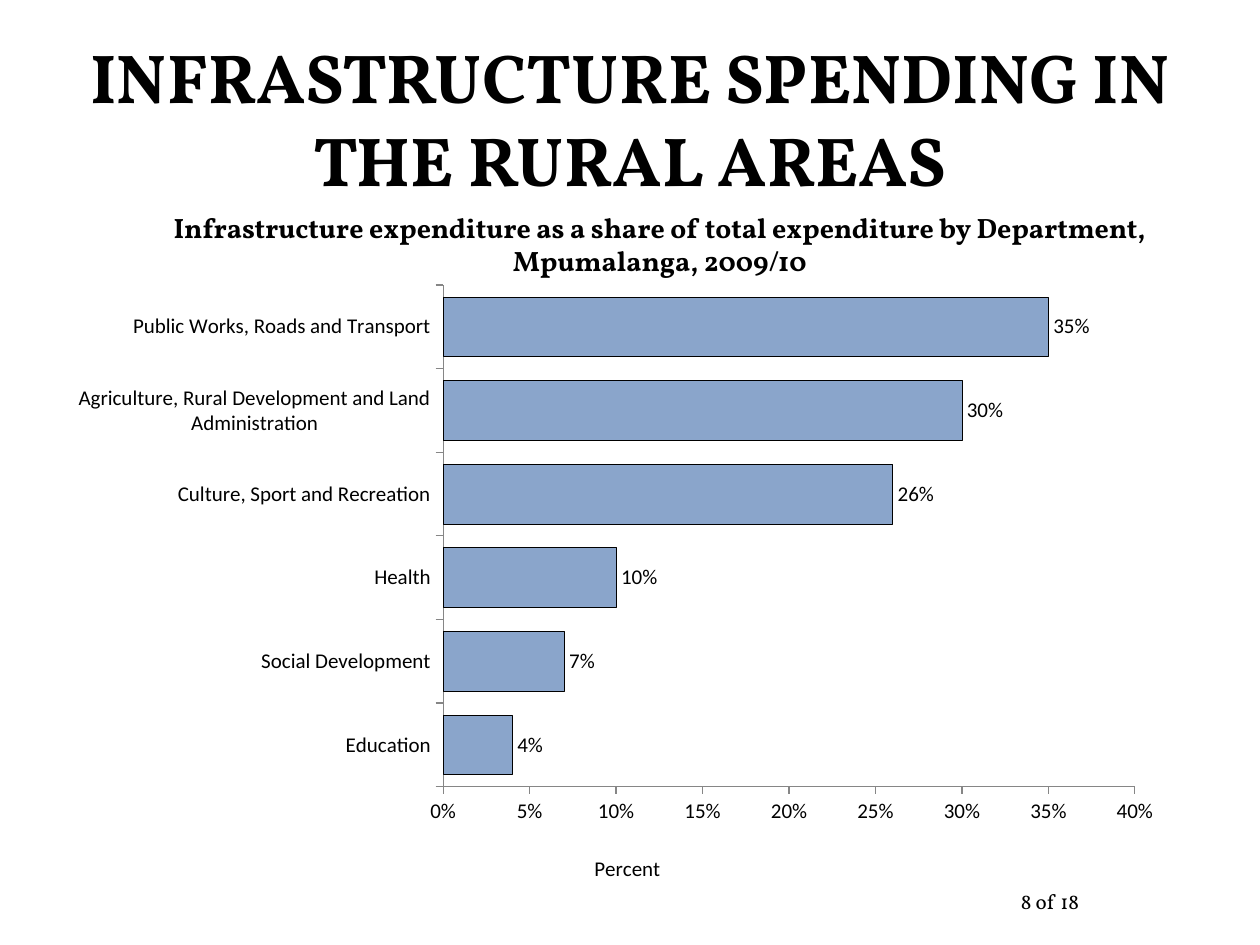
import pptx
import pptx.chart.data
import pptx.dml.color
import pptx.enum.chart
import pptx.enum.text
import pptx.oxml
import pptx.oxml.ns
import pptx.util

BLACK = pptx.dml.color.RGBColor(0x00, 0x00, 0x00)
BAR_BLUE = pptx.dml.color.RGBColor(0x8A, 0xA5, 0xCB)
AXIS_GREY = pptx.dml.color.RGBColor(0x86, 0x86, 0x86)
PX_PER_INCH = 126

SHARES = {
    "Education": 0.04,
    "Social Development": 0.07,
    "Health": 0.1,
    "Culture, Sport and Recreation": 0.26,
    "Agriculture, Rural Development and Land Administration": 0.3,
    "Public Works, Roads and Transport": 0.35,
}


def px(n):
    return pptx.util.Emu(round(n * 914400 / PX_PER_INCH))


def set_layout(parent, index, target=None, **fractions):
    for old in parent.findall(pptx.oxml.ns.qn("c:layout")):
        parent.remove(old)
    tags = f'<c:layoutTarget val="{target}"/>' if target else ""
    tags += "".join(f'<c:{k}Mode val="edge"/>' for k in "xy")
    tags += "".join(f'<c:{k} val="{v}"/>' for k, v in fractions.items())
    parent.insert(index, pptx.oxml.parse_xml(
        f'<c:layout {pptx.oxml.ns.nsdecls("c")}>'
        f"<c:manualLayout>{tags}</c:manualLayout></c:layout>"))


class Deck:
    """Holds the text and chart style and the current slide."""

    heading_font = "Vollkorn"
    chart_font = "Calibri"

    def __init__(self, prs):
        self.s = prs.slides.add_slide(prs.slide_layouts[5])

    def style(self, font, name, size, bold=False):
        font.name, font.size, font.bold = name, pptx.util.Pt(size), bold
        font.color.rgb = BLACK

    def fill_text(self, sp, text, size, bold, anchor):
        tf = sp.text_frame
        tf.word_wrap = True
        tf.auto_size = pptx.enum.text.MSO_AUTO_SIZE.NONE
        tf.vertical_anchor = anchor
        p = tf.paragraphs[0]
        p.text = text
        p.alignment = pptx.enum.text.PP_ALIGN.CENTER
        self.style(p.font, self.heading_font, size, bold)

    def title(self, text, x, y, w, h):
        sp = self.s.shapes.title
        sp.left, sp.top, sp.width, sp.height = map(px, (x, y, w, h))
        self.fill_text(sp, text, 39.6, True,
                       pptx.enum.text.MSO_ANCHOR.MIDDLE)

    def text(self, text, x, y, w, h, size, bold=False,
             anchor=pptx.enum.text.MSO_ANCHOR.TOP):
        sp = self.s.shapes.add_textbox(*map(px, (x, y, w, h)))
        self.fill_text(sp, text, size, bold, anchor)

    def bar_chart(self, shares, x, y, w, h):
        data = pptx.chart.data.CategoryChartData(number_format="0%")
        data.categories = list(shares)
        data.add_series("Series 1", list(shares.values()))
        chart = self.s.shapes.add_chart(
            pptx.enum.chart.XL_CHART_TYPE.BAR_CLUSTERED,
            *map(px, (x, y, w, h)), data).chart
        chart.has_legend = chart.has_title = False
        self.style(chart.font, self.chart_font, 12)
        set_layout(chart.plots[0]._element.getparent(), 0, "inner",
                   x=0.33, y=0.03, w=0.61, h=0.79)
        self.bars(chart.plots[0])
        self.axes(chart)

    def bars(self, plot):
        plot.gap_width = 40
        plot.vary_by_categories = False
        series = plot.series[0]
        series.format.fill.solid()
        series.format.fill.fore_color.rgb = BAR_BLUE
        series.format.line.color.rgb = BLACK
        series.format.line.width = pptx.util.Pt(0.25)
        plot.has_data_labels = True
        labels = plot.data_labels
        labels.show_value = True
        labels.number_format, labels.number_format_is_linked = "0%", False
        labels.position = pptx.enum.chart.XL_LABEL_POSITION.OUTSIDE_END

    def axes(self, chart):
        for axis in (chart.category_axis, chart.value_axis):
            axis.has_major_gridlines = False
            axis.major_tick_mark = pptx.enum.chart.XL_TICK_MARK.OUTSIDE
            axis.format.line.color.rgb = AXIS_GREY
        chart.category_axis.tick_label_position = (
            pptx.enum.chart.XL_TICK_LABEL_POSITION.LOW)
        axis = chart.value_axis
        axis.minimum_scale, axis.maximum_scale, axis.major_unit = 0, 0.4, 0.05
        axis.tick_labels.number_format = "0%"
        axis.tick_labels.number_format_is_linked = False
        p = axis.axis_title.text_frame.paragraphs[0]
        p.add_run().text = "Percent"
        self.style(p.font, self.chart_font, 12)
        set_layout(axis.axis_title._element, 1, x=0.46, y=0.92)


def main():
    prs = pptx.Presentation()
    prs.slide_width, prs.slide_height = px(1260), px(945)
    deck = Deck(prs)
    deck.text("Infrastructure expenditure as a share of total expenditure "
              "by Department, Mpumalanga, 2009/10",
              144, 204, 1032, 81, 16, bold=True)
    deck.bar_chart(SHARES, 69, 266, 1134, 635)
    deck.title("INFRASTRUCTURE SPENDING IN THE RURAL AREAS", 63, 38, 1134, 158)
    deck.text("8 of 18", 903, 876, 294, 50, 12,
              anchor=pptx.enum.text.MSO_ANCHOR.MIDDLE)
    prs.save("out.pptx")


if __name__ == "__main__":
    main()
